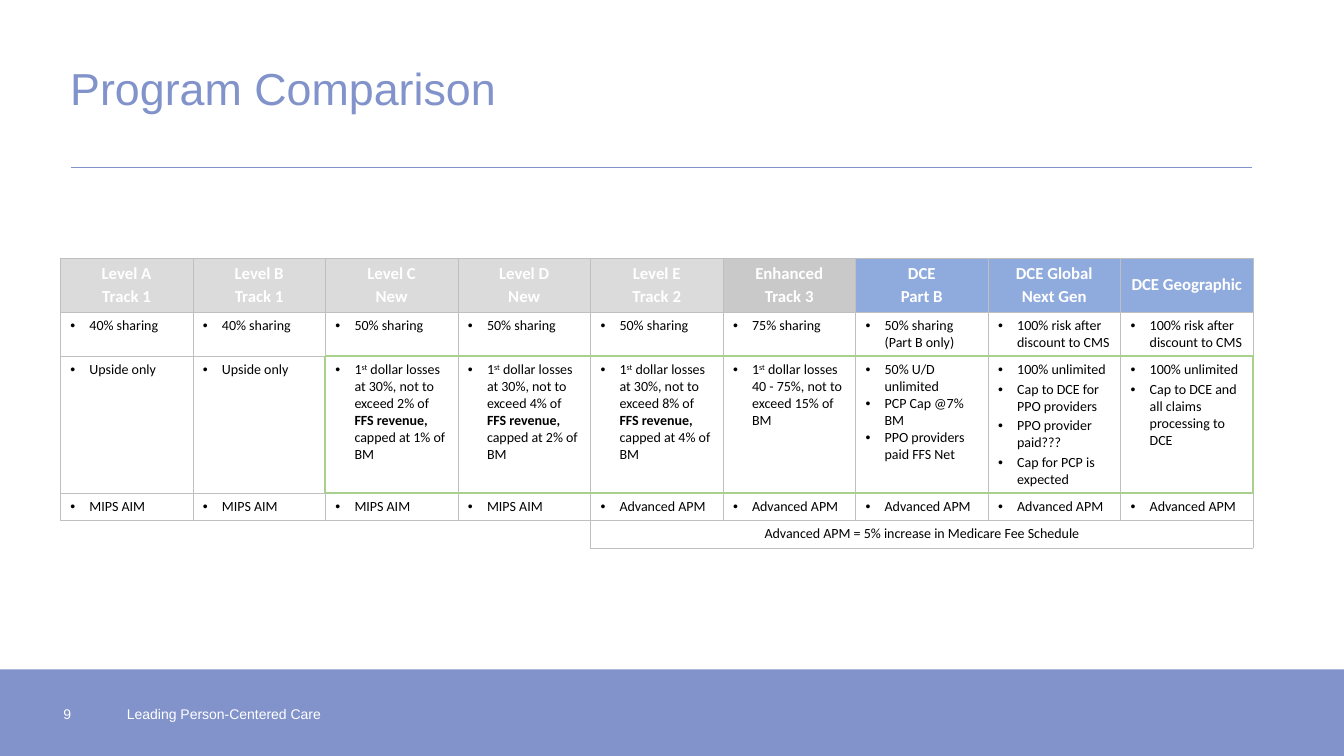
from lxml import etree
from pptx import Presentation
from pptx.dml.color import RGBColor
from pptx.enum.shapes import MSO_CONNECTOR, MSO_SHAPE
from pptx.enum.text import MSO_ANCHOR, PP_ALIGN
from pptx.oxml.ns import qn
from pptx.util import Cm, Pt

RECTANGLE = MSO_SHAPE.RECTANGLE
STRAIGHT = MSO_CONNECTOR.STRAIGHT
TOP, MIDDLE = MSO_ANCHOR.TOP, MSO_ANCHOR.MIDDLE
LEFT, CENTER = PP_ALIGN.LEFT, PP_ALIGN.CENTER

PERIWINKLE = RGBColor(0x81, 0x93, 0xCA)
WHITE = RGBColor(0xFF, 0xFF, 0xFF)
BLACK = RGBColor(0x00, 0x00, 0x00)
LIGHT_GREY = RGBColor(0xDB, 0xDB, 0xDB)
MID_GREY = RGBColor(0xC9, 0xC9, 0xC9)
DCE_BLUE = RGBColor(0x8F, 0xAA, 0xDC)
RULE_GREY = RGBColor(0xBF, 0xBF, 0xBF)
RISK_GREEN = RGBColor(0xA9, 0xD1, 0x8E)

SLIDE_W, SLIDE_H = 33.87, 19.05
COLUMN_W = 3.34
ROW_HEIGHTS = [1.36, 1.11, 3.46, 0.69, 0.69]
RISK_ROW, FIRST_RISK_COLUMN = 2, 2
NOTE_ROW, FIRST_NOTE_COLUMN = 4, 4
TIGHT_CELL = (2, 6)
BULLET_INDENT = Cm(0.48)


def first_dollar(before, revenue_cap=None):
    """Runs of a loss rule: (text, style), with an optional benchmark cap."""
    runs = [("1", ""), ("st", "superscript"), (f" dollar losses {before}", "")]
    if revenue_cap:
        runs += [("FFS revenue,", "bold"), (f" capped at {revenue_cap} of BM", "")]
    return [runs]


HEADERS = [
    (["Level A", "Track 1"], LIGHT_GREY),
    (["Level B", "Track 1"], LIGHT_GREY),
    (["Level C", "New"], LIGHT_GREY),
    (["Level D", "New"], LIGHT_GREY),
    (["Level E", "Track 2"], LIGHT_GREY),
    (["Enhanced", "Track 3"], MID_GREY),
    (["DCE", "Part B"], DCE_BLUE),
    (["DCE Global", "Next Gen"], DCE_BLUE),
    (["DCE Geographic"], DCE_BLUE),
]
SHARING = (
    [["40% sharing"]] * 2 + [["50% sharing"]] * 3
    + [["75% sharing"], ["50% sharing (Part B only)"]]
    + [["100% risk after discount to CMS"]] * 2
)
RISK = [
    ["Upside only"],
    ["Upside only"],
    first_dollar("at 30%, not to exceed 2% of ", "1%"),
    first_dollar("at 30%, not to exceed 4% of ", "2%"),
    first_dollar("at 30%, not to exceed 8% of ", "4%"),
    first_dollar("40 - 75%, not to exceed 15% of BM"),
    ["50% U/D unlimited", "PCP Cap @7% BM", "PPO providers paid FFS Net"],
    ["100% unlimited", "Cap to DCE for PPO providers", "PPO provider paid???",
     "Cap for PCP is expected"],
    ["100% unlimited", "Cap to DCE and all claims processing to DCE"],
]
STATUS = [["MIPS AIM"]] * 4 + [["Advanced APM"]] * 5
NOTE = "Advanced APM = 5% increase in Medicare Fee Schedule"


def write_text(frame, paragraphs, size, color, font="Arial", bold=False,
               align=LEFT, gap=0, bullet=False, line_spacing=None):
    for index, content in enumerate(paragraphs):
        paragraph = frame.add_paragraph() if index else frame.paragraphs[0]
        paragraph.alignment = align
        if index:
            paragraph.space_before = Pt(gap)
        if line_spacing:
            paragraph.line_spacing = line_spacing
        if bullet:
            properties = paragraph._p.get_or_add_pPr()
            properties.set("marL", str(BULLET_INDENT))
            properties.set("indent", str(-BULLET_INDENT))
            etree.SubElement(properties, qn("a:buFont"), typeface="Arial")
            etree.SubElement(properties, qn("a:buChar"), char="•")
        runs = [(content, "")] if isinstance(content, str) else content
        for words, style in runs:
            run = paragraph.add_run()
            run.text = words
            run.font.size = Pt(size)
            run.font.name = font
            run.font.color.rgb = color
            run.font.bold = bold or style == "bold"
            if style == "superscript":
                run.font._element.set("baseline", "30000")


def add_text(slide, words, left, top, width, height, anchor=TOP, **text_format):
    frame = slide.shapes.add_textbox(Cm(left), Cm(top), Cm(width), Cm(height)).text_frame
    frame.word_wrap = True
    frame.vertical_anchor = anchor
    write_text(frame, [words], **text_format)


def add_heading(slide, left, top, width, height):
    add_text(slide, "Program Comparison", left, top, width, height, anchor=MIDDLE,
             size=32, color=PERIWINKLE, line_spacing=0.9)
    rule_y = Cm(top + height + 0.94)
    rule = slide.shapes.add_connector(
        STRAIGHT, Cm(left + 0.28), rule_y, Cm(left + width - 0.02), rule_y)
    rule.line.color.rgb = PERIWINKLE
    rule.line.width = Pt(0.5)
    etree.SubElement(rule._element.spPr, qn("a:effectLst"))


def add_footer(slide, left, top, width, height):
    band = slide.shapes.add_shape(RECTANGLE, Cm(left), Cm(top), Cm(width), Cm(height))
    band.shadow.inherit = False
    band.fill.solid()
    band.fill.fore_color.rgb = PERIWINKLE
    band.line.fill.background()
    for words, offset, box_width in [("Leading Person-Centered Care", 2.95, 7.62),
                                     ("9", 1.35, 1.27)]:
        add_text(slide, words, left + offset, top + 0.78, box_width, 1.02,
                 size=10, color=WHITE)


def edge_styles(row, column):
    """Colour and width of each side of a cell, None where it has no line."""
    last = len(HEADERS) - 1
    grey, green = (RULE_GREY, 0.5), (RISK_GREEN, 1.5)
    at_risk = column >= FIRST_RISK_COLUMN
    edges = dict.fromkeys("LRTB", grey)
    if at_risk and row in (RISK_ROW, RISK_ROW + 1):
        edges["T"] = green
    if at_risk and row in (RISK_ROW - 1, RISK_ROW):
        edges["B"] = green
    if row == RISK_ROW and column == FIRST_RISK_COLUMN:
        edges["L"] = green
    if row == RISK_ROW and column in (FIRST_RISK_COLUMN - 1, last):
        edges["R"] = green
    if at_risk and row == NOTE_ROW - 1:
        edges["B"] = (RULE_GREY, 1)
    if row == NOTE_ROW:
        if at_risk:
            edges["T"] = (RULE_GREY, 1)
        if column < FIRST_NOTE_COLUMN:
            edges["L"] = edges["B"] = None
            if column < FIRST_NOTE_COLUMN - 1:
                edges["R"] = None
    return edges


def draw_edges(cell, edges):
    properties = cell._tc.get_or_add_tcPr()
    for position, (side, style) in enumerate(edges.items()):
        line = etree.Element(qn(f"a:ln{side}"))
        if style:
            color, width = style
            line.set("w", str(Pt(width)))
            fill = etree.SubElement(line, qn("a:solidFill"))
            etree.SubElement(fill, qn("a:srgbClr"), val=str(color))
        else:
            etree.SubElement(line, qn("a:noFill"))
        properties.insert(position, line)


def add_comparison(slide, left, top):
    columns = len(HEADERS)
    table = slide.shapes.add_table(
        len(ROW_HEIGHTS), columns, Cm(left), Cm(top),
        Cm(COLUMN_W * columns), Cm(sum(ROW_HEIGHTS))).table
    table.first_row = table.horz_banding = False
    for column in table.columns:
        column.width = Cm(COLUMN_W)
    for row, height in zip(table.rows, ROW_HEIGHTS):
        row.height = Cm(height)
    table.cell(NOTE_ROW, FIRST_NOTE_COLUMN).merge(table.cell(NOTE_ROW, columns - 1))

    for r in range(len(ROW_HEIGHTS)):
        for c in range(columns):
            cell = table.cell(r, c)
            cell.fill.background()
            draw_edges(cell, edge_styles(r, c))
            if r == NOTE_ROW and c != FIRST_NOTE_COLUMN:
                etree.SubElement(cell.text_frame.paragraphs[0]._p,
                                 qn("a:endParaRPr"), sz="1000")

    for c, (titles, color) in enumerate(HEADERS):
        cell = table.cell(0, c)
        cell.fill.solid()
        cell.fill.fore_color.rgb = color
        cell.vertical_anchor = MIDDLE
        write_text(cell.text_frame, titles, size=12, color=WHITE, font="Calibri",
                   bold=True, align=CENTER, gap=2)
    for r, entries in enumerate([SHARING, RISK, STATUS], start=1):
        for c, items in enumerate(entries):
            write_text(table.cell(r, c).text_frame, items, size=10, color=BLACK,
                       font="Calibri", bullet=True, gap=0 if (r, c) == TIGHT_CELL else 2)
    write_text(table.cell(NOTE_ROW, FIRST_NOTE_COLUMN).text_frame, [NOTE],
               size=10, color=BLACK, font="Calibri", align=CENTER)


def main():
    deck = Presentation()
    deck.slide_width, deck.slide_height = Cm(SLIDE_W), Cm(SLIDE_H)
    slide = deck.slides.add_slide(deck.slide_layouts[6])
    add_footer(slide, 0, 16.87, SLIDE_W, SLIDE_H - 16.87)
    add_heading(slide, 1.52, 1.32, 30.05, 1.96)
    add_comparison(slide, 1.52, 6.5)
    deck.save("out.pptx")


if __name__ == "__main__":
    main()
